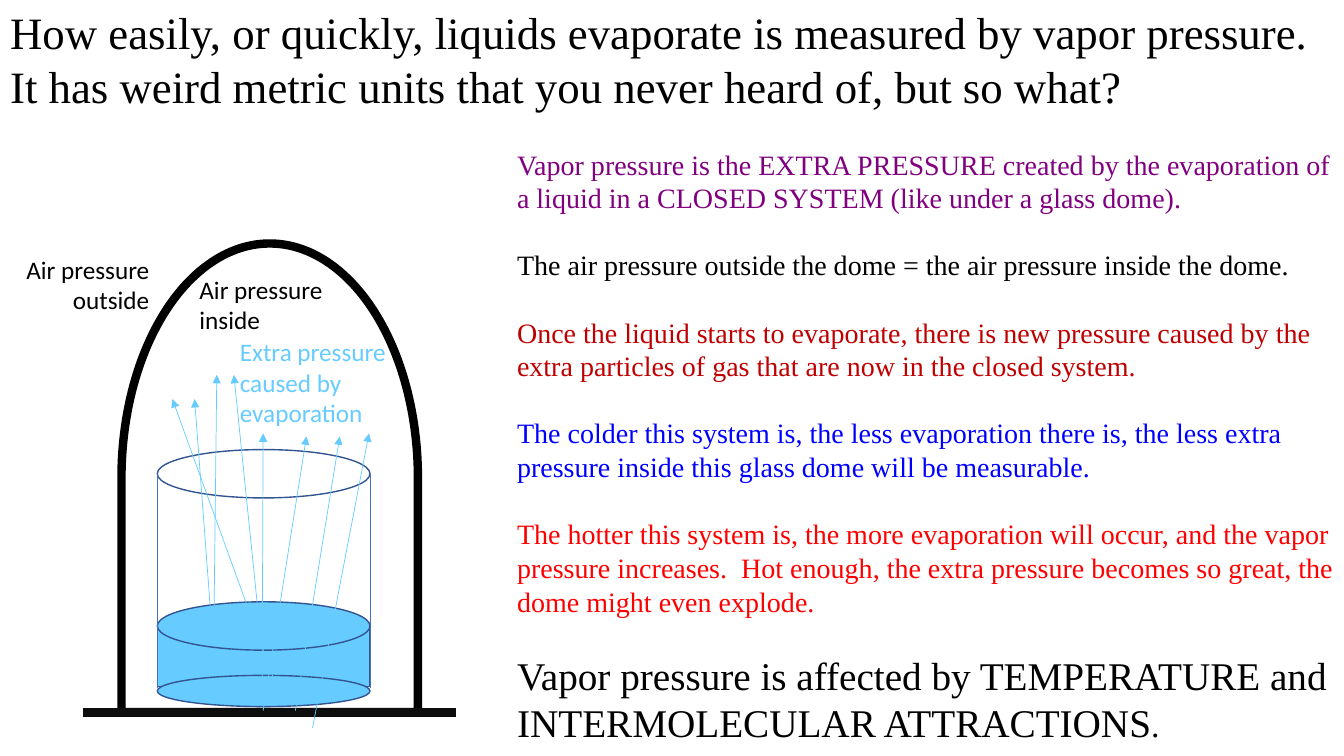
from lxml import etree
from pptx import Presentation
from pptx.dml.color import RGBColor
from pptx.enum.shapes import MSO_CONNECTOR, MSO_SHAPE
from pptx.enum.text import MSO_ANCHOR, MSO_AUTO_SIZE, PP_ALIGN
from pptx.oxml.ns import qn
from pptx.util import Inches, Pt

OVAL, RECT = MSO_SHAPE.OVAL, MSO_SHAPE.RECTANGLE
DELAY = MSO_SHAPE.FLOWCHART_DELAY
STRAIGHT = MSO_CONNECTOR.STRAIGHT
LEFT, RIGHT = PP_ALIGN.LEFT, PP_ALIGN.RIGHT
SERIF, SANS = "Times New Roman", "Calibri"
COLORS = {
    "black": "000000", "base": "0D0D0D", "water": "66CCFF",
    "rim": "325491", "wall": "4472C4", "purple": "800080",
    "crimson": "C00000", "blue": "0000FF", "red": "FF0000",
}

prs = Presentation()
prs.slide_width, prs.slide_height = Inches(13.33), Inches(7.5)
s = prs.slides.add_slide(prs.slide_layouts[5])


def write(sp, box, paragraphs, font=SERIF, size=20, align=LEFT, gap=0):
    """Fill a text shape; each paragraph is a list of (text, colour, size)."""
    sp.left, sp.top, sp.width, sp.height = map(Inches, box)
    tf = sp.text_frame
    tf.word_wrap, tf.auto_size = True, MSO_AUTO_SIZE.NONE
    tf.vertical_anchor = MSO_ANCHOR.TOP
    for i, parts in enumerate(paragraphs):
        p = tf.add_paragraph() if i else tf.paragraphs[0]
        p.alignment = align
        p.space_before = Pt(gap if i else 0)
        for text, color, *own_size in parts:
            for j, line in enumerate(text.split("\n")):
                if j:
                    p.add_line_break()
                r = p.add_run()
                r.text = line
                r.font.name = font
                r.font.size = Pt(own_size[0] if own_size else size)
                r.font.color.rgb = RGBColor.from_string(COLORS[color])


def connect(start, end, color, width, arrow=False):
    sp = s.shapes.add_connector(STRAIGHT, *map(Inches, start + end))
    sp.line.color.rgb = RGBColor.from_string(COLORS[color])
    sp.line.width = Pt(width)
    if arrow:
        ln = sp.line._get_or_add_ln()
        etree.SubElement(ln, qn("a:tailEnd"), type="triangle")
    etree.SubElement(sp._element.spPr, qn("a:effectLst"))


# Title
write(s.shapes.title, (0, 0, 13.33, 1.18), [[(
    "How easily, or quickly, liquids evaporate is measured by vapor pressure.  "
    "It has weird metric units that you never heard of, but so what?", "black")]], size=32)

# Beaker, water and dome, from back to front
BEAKER_X, BEAKER_W = 1.56, 2.11
for kind, x, y, w, h, fill, line, width, turn in [
    (OVAL, BEAKER_X, 4.46, BEAKER_W, 0.48, None, "rim", 1, 0),
    (RECT, BEAKER_X, 6.22, BEAKER_W, 0.59, "water", "rim", 1, 0),
    (OVAL, BEAKER_X, 6.7, BEAKER_W, 0.31, "water", "rim", 1, 0),
    (OVAL, BEAKER_X, 5.97, BEAKER_W, 0.48, "water", "rim", 1, 0),
    (DELAY, 0.35, 3.27, 4.65, 2.94, None, "black", 6, 270),
]:
    sp = s.shapes.add_shape(kind, *map(Inches, (x, y, w, h)))
    sp.shadow.inherit = False
    sp.rotation = turn
    if fill:
        sp.fill.solid()
        sp.fill.fore_color.rgb = RGBColor.from_string(COLORS[fill])
    else:
        sp.fill.background()
    sp.line.color.rgb = RGBColor.from_string(COLORS[line])
    sp.line.width = Pt(width)
for x in (BEAKER_X, BEAKER_X + BEAKER_W):
    connect((x, 4.7), (x, 6.83), "wall", 0.5)
connect((0.82, 7.07), (4.52, 7.07), "base", 6)

# Explanation
write(s.shapes.add_textbox(0, 0, 0, 0), (5.03, 1.41, 8.33, 6.09), [
    [("Vapor pressure is the EXTRA PRESSURE created by the evaporation of\n"
      "a liquid in a CLOSED SYSTEM (like under a glass dome).", "purple")],
    [("The air pressure outside the dome = the air pressure inside the dome.", "black")],
    [("Once the liquid starts to evaporate, there is new pressure caused by the "
      "extra particles of gas that are now in the closed system.", "crimson")],
    [("The colder this system is, the less evaporation there is, the less extra "
      "pressure inside this glass dome will be measurable.", "blue")],
    [("The hotter this system is, the more evaporation will occur, and the vapor "
      "pressure increases.  Hot enough, the extra pressure becomes so great, the "
      "dome might even explode.", "red")],
    [("Vapor pressure is affected by TEMPERATURE and INTERMOLECULAR ATTRACTIONS", "black", 28),
     (".", "black", 24)],
], gap=24)

# Escaping vapor
for start, end in [
    ((2.1, 6.22), (1.93, 3.96)), ((2.12, 6.39), (2.15, 3.72)),
    ((2.57, 6.17), (2.32, 3.72)), ((2.6, 6.72), (2.61, 4.3)),
    ((2.77, 6.89), (1.71, 3.96)), ((2.93, 7.05), (3.37, 4.33)),
    ((3.1, 7.22), (3.66, 4.3)), ((2.61, 7.05), (3.04, 4.33)),
]:
    connect(start, end, "water", 0.5, arrow=True)

# Diagram labels
for text, box, color, align in [
    ("Air pressure outside", (0.05, 2.47, 1.53, 0.71), "black", RIGHT),
    ("Air pressure inside", (1.88, 2.67, 1.53, 0.71), "black", LEFT),
    ("Extra pressure caused by evaporation", (2.28, 3.29, 1.75, 1.01), "water", LEFT),
]:
    write(s.shapes.add_textbox(0, 0, 0, 0), box, [[(text, color)]],
          font=SANS, size=18, align=align)

prs.save("out.pptx")
